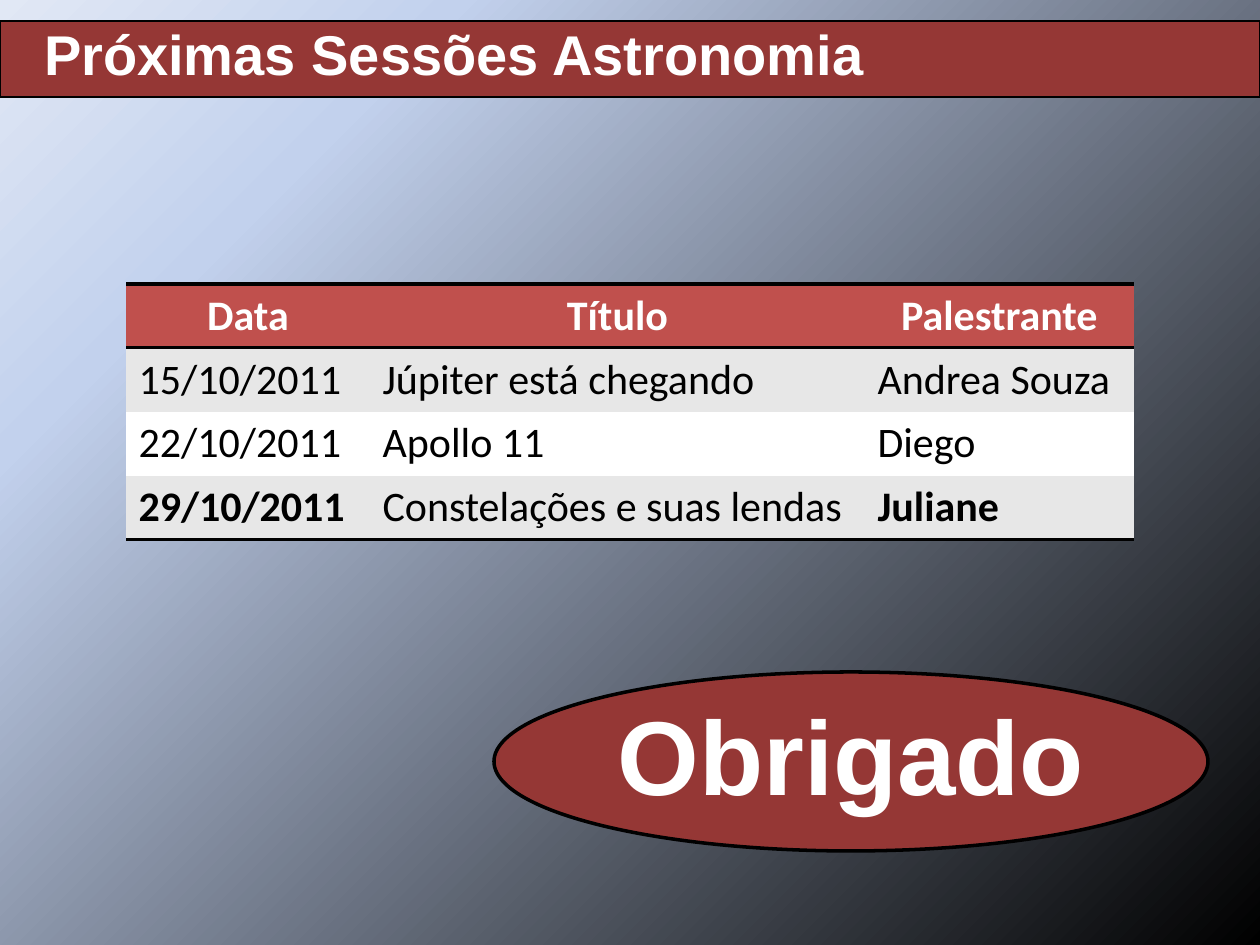
from copy import deepcopy
from dataclasses import dataclass

from lxml.etree import SubElement
from pptx import Presentation
from pptx.dml.color import RGBColor
from pptx.enum.shapes import MSO_SHAPE
from pptx.enum.text import MSO_ANCHOR, MSO_AUTO_SIZE, PP_ALIGN
from pptx.oxml.ns import qn
from pptx.util import Emu, Pt

SCALE = 914400 / 126
PLAIN = "{2D5ABB26-0587-4C30-8999-92F81FD0307C}"  # no style, no grid


@dataclass(frozen=True)
class Theme:
    bar: str = "953735"
    head: str = "C0504D"
    band: str = "E7E7E7"
    white: str = "FFFFFF"
    black: str = "000000"
    back: tuple = ((0, "000000"), (0.79, "C2D1ED"), (1, "E1E8F5"))
    show: str = "Arial"
    body: str = "Calibri"
    title: int = 32
    cell: int = 24
    thanks: int = 60


def px(n):
    return Emu(round(n * SCALE))


def rgb(code):
    return RGBColor.from_string(code)


def style(item, form):
    for key, val in form.items():
        setattr(item, key, val)


class Deck:
    def __init__(self, theme):
        self.theme = theme
        self.file = Presentation()
        style(self.file, {"slide_width": px(1260), "slide_height": px(945)})
        self.slide = self.file.slides.add_slide(self.file.slide_layouts[5])

    def back(self):
        fill = self.slide.background.fill
        fill.gradient()
        fill.gradient_angle = 135
        stops = self.slide.element.find(".//" + qn("a:gsLst"))
        stops.append(deepcopy(stops[0]))
        for stop, (pos, code) in zip(fill.gradient_stops, self.theme.back):
            stop.position = pos
            stop.color.rgb = rgb(code)

    def label(self, frame, text, font, size, code, bold, align, gap=1.0):
        para = frame.paragraphs[0]
        style(para, {"alignment": align, "line_spacing": gap})
        run = para.add_run()
        run.text = text
        style(run.font, {"name": font, "size": Pt(size), "bold": bold})
        run.font.color.rgb = rgb(code)

    def paint(self, shape, width):
        shape.fill.solid()
        shape.fill.fore_color.rgb = rgb(self.theme.bar)
        shape.line.color.rgb = rgb(self.theme.black)
        shape.line.width = Pt(width)

    def title(self, text, x, y, w, h):
        shape = self.slide.shapes.title
        style(shape, {"left": px(x), "top": px(y), "width": px(w), "height": px(h)})
        self.paint(shape, 0.75)
        frame = shape.text_frame
        style(frame, {"auto_size": MSO_AUTO_SIZE.NONE, "word_wrap": True,
                      "vertical_anchor": MSO_ANCHOR.TOP, "margin_left": px(44)})
        look = self.theme
        self.label(frame, text, look.show, look.title, look.white, True,
                   PP_ALIGN.LEFT, 0.9)

    def oval(self, text, x, y, w, h):
        shape = self.slide.shapes.add_shape(MSO_SHAPE.OVAL, px(x), px(y), px(w), px(h))
        shape.shadow.inherit = False
        self.paint(shape, 2)
        frame = shape.text_frame
        frame.vertical_anchor = MSO_ANCHOR.MIDDLE
        look = self.theme
        self.label(frame, text, look.show, look.thanks, look.white, True,
                   PP_ALIGN.CENTER, 0.9)

    def rule(self, cell, side):
        line = SubElement(cell._tc.get_or_add_tcPr(), qn("a:ln" + side), w=str(Pt(2)))
        fill = SubElement(line, qn("a:solidFill"))
        SubElement(fill, qn("a:srgbClr"), val=self.theme.black)

    def table(self, rows, bold, x, y, cols, high):
        look, last = self.theme, len(rows) - 1
        frame = self.slide.shapes.add_table(len(rows), len(cols), px(x), px(y),
                                            px(sum(cols)), px(high * len(rows)))
        frame.element.find(".//" + qn("a:tableStyleId")).text = PLAIN
        grid = frame.table
        for col, wide in zip(grid.columns, cols):
            col.width = px(wide)
        for r, row in enumerate(rows):
            grid.rows[r].height = px(high)
            tint = look.head if r == 0 else look.band if r % 2 else look.white
            ink = look.black if r else look.white
            align = PP_ALIGN.LEFT if r else PP_ALIGN.CENTER
            for c, text in enumerate(row):
                cell = grid.cell(r, c)
                # Borders come before the fill in the cell's XML
                if r == 0:
                    self.rule(cell, "T")
                if r in (0, last):
                    self.rule(cell, "B")
                cell.fill.solid()
                cell.fill.fore_color.rgb = rgb(tint)
                self.label(cell.text_frame, text, look.body, look.cell, ink,
                           r == 0 or (r, c) in bold, align)


def main():
    deck = Deck(Theme())

    # Backdrop and title bar
    deck.back()
    deck.title("Próximas Sessões Astronomia", 0, 21, 1260, 76)

    # Session list
    rows = (
        ("Data", "Título", "Palestrante"),
        ("15/10/2011", "Júpiter está chegando", "Andrea Souza"),
        ("22/10/2011", "Apollo 11", "Diego"),
        ("29/10/2011", "Constelações e suas lendas", "Juliane"),
    )
    deck.table(rows, {(3, 0), (3, 2)}, 126, 284, (244, 495, 269), 63)

    # Closing thanks
    deck.oval("Obrigado", 494, 672, 714, 179)

    deck.file.save("out.pptx")


if __name__ == "__main__":
    main()
